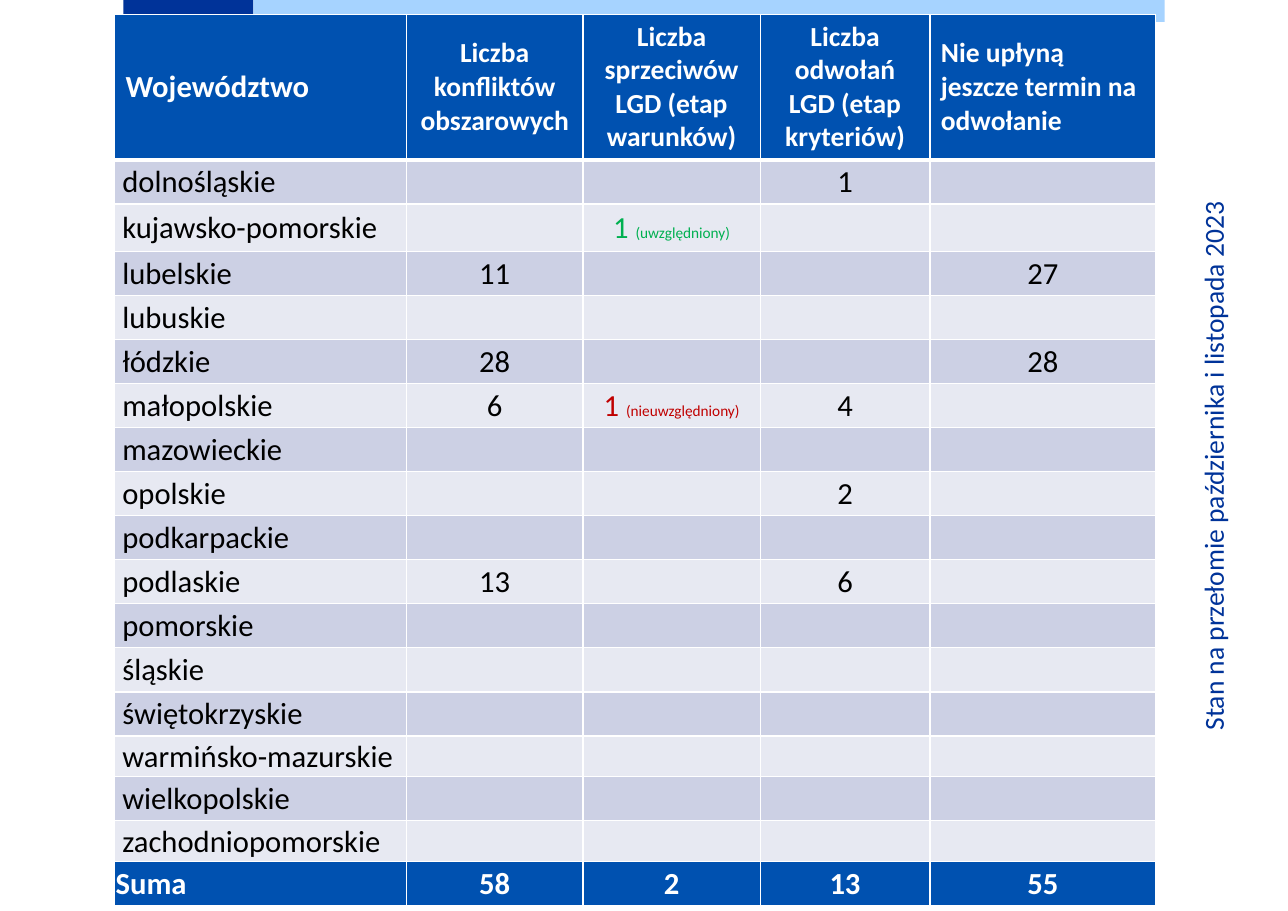
from dataclasses import dataclass

from lxml.etree import SubElement
from pptx import Presentation
from pptx.dml.color import RGBColor
from pptx.enum.shapes import MSO_SHAPE
from pptx.enum.text import MSO_ANCHOR, PP_ALIGN
from pptx.oxml.ns import qn
from pptx.util import Inches, Pt


@dataclass(frozen=True)
class Theme:
    """Colours, type sizes and font of the slide."""
    navy: str = "003399"
    sky: str = "A6D3FF"
    blue: str = "0051B0"
    bands: tuple = ("CCD0E4", "E7E9F2")
    white: str = "FFFFFF"
    black: str = "000000"
    green: str = "00B050"
    red: str = "C00000"
    font: str = "Calibri"
    large: int = 20
    mid: int = 18
    small: int = 10


THEME = Theme()
HEADS = [
    "Województwo", "Liczba konfliktów obszarowych",
    "Liczba sprzeciwów LGD (etap warunków)",
    "Liczba odwołań LGD (etap kryteriów)",
    "Nie upłyną jeszcze termin na odwołanie",
]
REGIONS = [
    "dolnośląskie", "kujawsko-pomorskie", "lubelskie", "lubuskie", "łódzkie",
    "małopolskie", "mazowieckie", "opolskie", "podkarpackie", "podlaskie",
    "pomorskie", "śląskie", "świętokrzyskie", "warmińsko-mazurskie",
    "wielkopolskie", "zachodniopomorskie",
]
COUNTS = {
    "dolnośląskie": ("", "", "1", ""),
    "kujawsko-pomorskie": ("", "1 ", "", ""),
    "lubelskie": ("11", "", "", "27"),
    "łódzkie": ("28", "", "", "28"),
    "małopolskie": ("6", "1 ", "4", ""),
    "opolskie": ("", "", "2", ""),
    "podlaskie": ("13", "", "6", ""),
}
NOTES = {
    "kujawsko-pomorskie": ("(uwzględniony)", THEME.green),
    "małopolskie": ("(nieuwzględniony)", THEME.red),
}
TOTALS = ["Suma", "58", "2", "13", "55"]
WIDTHS = [2.65, 1.6, 1.61, 1.54, 2.05]
HEIGHTS = {
    "kujawsko-pomorskie": 0.43,
    "warmińsko-mazurskie": 0.37,
    "zachodniopomorskie": 0.37,
}


def style(run, size, color, bold=False):
    """Set the font of a run."""
    run.font.name = THEME.font
    run.font.size = Pt(size)
    run.font.bold = bold
    run.font.color.rgb = RGBColor.from_string(color)


def border(cell, sides):
    """Draw white borders of the given widths around a cell."""
    props = cell._tc.get_or_add_tcPr()
    for side, width in sides.items():
        line = SubElement(props, qn(f"a:ln{side}"), w=str(Pt(width)))
        fill = SubElement(line, qn("a:solidFill"))
        SubElement(fill, qn("a:srgbClr"), val=THEME.white)


def paint(cell, text, fill, color, size, bold, align, pads, sides):
    """Fill one table cell and format its text."""
    border(cell, sides)
    cell.fill.solid()
    cell.fill.fore_color.rgb = RGBColor.from_string(fill)
    cell.vertical_anchor = MSO_ANCHOR.MIDDLE
    cell.margin_left, cell.margin_right, cell.margin_top, cell.margin_bottom = (
        Inches(pad) for pad in pads)
    para = cell.text_frame.paragraphs[0]
    para.alignment = align
    if text:
        para.text = text
        style(para.runs[0], size, color, bold)


def add_bar(slide, left, top, width, height, color):
    """Add a plain coloured bar."""
    bar = slide.shapes.add_shape(
        MSO_SHAPE.RECTANGLE, Inches(left), Inches(top), Inches(width), Inches(height))
    bar.shadow.inherit = False
    bar.fill.solid()
    bar.fill.fore_color.rgb = RGBColor.from_string(color)
    bar.line.fill.background()


def add_band(slide, left, top, width, height):
    """Add the two-colour band at the top edge."""
    dark = 1.18
    add_bar(slide, left, top, dark, height, THEME.navy)
    add_bar(slide, left + dark, top, width - dark, height, THEME.sky)


def add_grid(slide, left, top, width, height):
    """Add the table of conflicts and appeals by region."""
    body = [[name, *COUNTS.get(name, [""] * 4)] for name in REGIONS]
    rows = [HEADS, *body, TOTALS]
    table = slide.shapes.add_table(
        len(rows), len(HEADS), Inches(left), Inches(top),
        Inches(width), Inches(height)).table
    for col, size in zip(table.columns, WIDTHS):
        col.width = Inches(size)
    last = len(rows) - 1
    for r, row in enumerate(rows):
        head, total = r == 0, r == last
        strong = head or total
        table.rows[r].height = Inches(1.3 if head else HEIGHTS.get(row[0], 0.4))
        sides = {"L": 1, "R": 1, "T": 3 if r == 1 else 1, "B": 3 if head else 1}
        for c, text in enumerate(row):
            flush = c == 0 or (head and c == len(row) - 1)
            inset = 0.07 if c == 0 and not total else 0.01
            paint(
                table.cell(r, c), text,
                THEME.blue if strong else THEME.bands[(r - 1) % 2],
                THEME.white if strong else THEME.black,
                THEME.mid if head and c else THEME.large, strong,
                PP_ALIGN.LEFT if flush else PP_ALIGN.CENTER,
                (0.1, 0.1, 0.05, 0.05) if head else (inset, 0.01, 0.01, 0),
                sides)
        if row[0] in NOTES:
            note, color = NOTES[row[0]]
            para = table.cell(r, 2).text_frame.paragraphs[0]
            style(para.runs[0], THEME.large, color)
            run = para.add_run()
            run.text = note
            style(run, THEME.small, color)


def add_date(slide, left, top, width, height):
    """Add the date line, turned to read upwards."""
    box = slide.shapes.add_textbox(
        Inches(left), Inches(top), Inches(width), Inches(height))
    box.rotation = 270
    frame = box.text_frame
    frame.word_wrap = True
    frame.text = "Stan na przełomie października i listopada 2023"
    style(frame.paragraphs[0].runs[0], THEME.mid, THEME.navy)


def main():
    """Build and save the slide."""
    deck = Presentation()
    deck.slide_width, deck.slide_height = Inches(11.69), Inches(8.27)
    slide = deck.slides.add_slide(deck.slide_layouts[6])
    add_band(slide, 1.12, 0, 9.45, 0.2)
    add_grid(slide, 1.04, 0.13, 9.45, 8.01)
    add_date(slide, 8.41, 3.93, 5.2, 0.4)
    deck.save("out.pptx")


if __name__ == "__main__":
    main()
